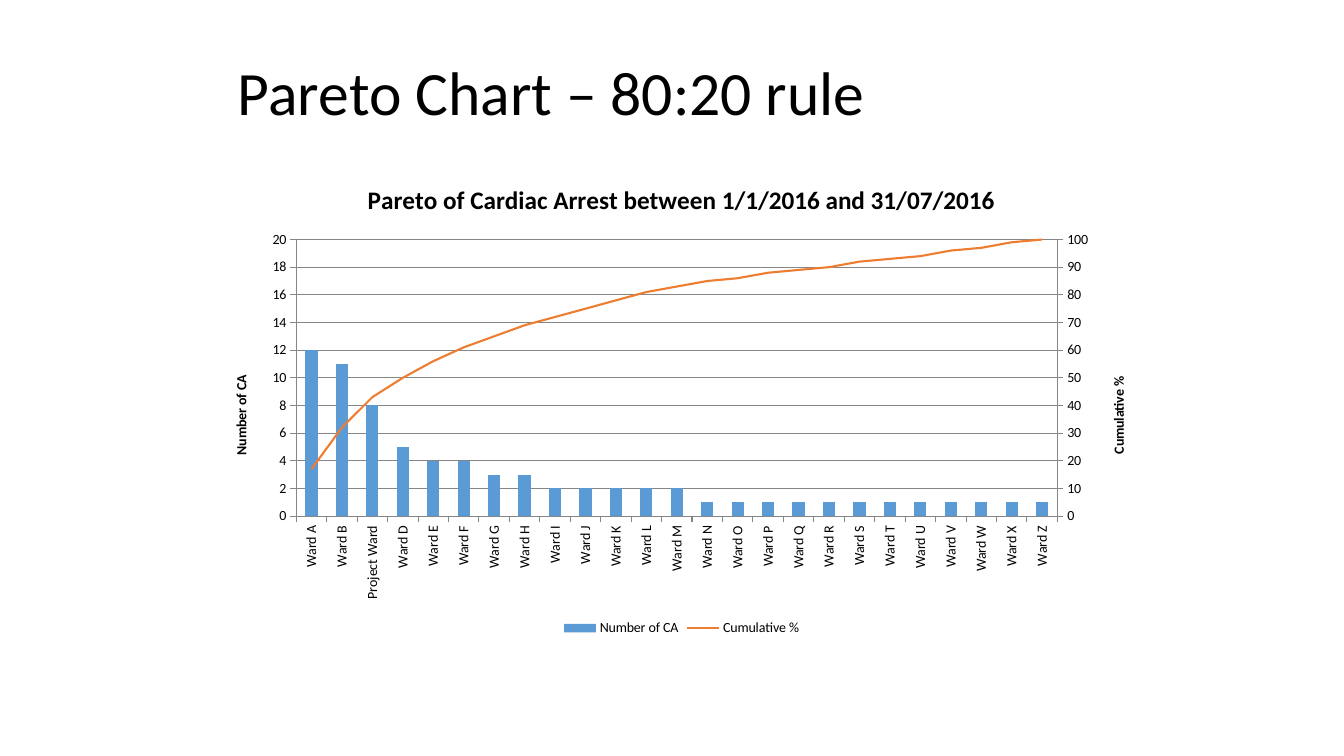
from copy import deepcopy
from itertools import accumulate

from pptx import Presentation
from pptx.chart import axis as ax, data
from pptx.dml import color
from pptx.enum import chart as ch, text
from pptx.oxml import ns, parse_xml
from pptx.util import Inches, Pt

HEADING = "Pareto Chart – 80:20 rule"
CHART_TITLE = "Pareto of Cardiac Arrest between 1/1/2016 and 31/07/2016"
COUNT_NAME = "Number of CA"
CUMULATIVE_NAME = "Cumulative %"
WARDS = ["Ward A", "Ward B", "Project Ward"] + [f"Ward {c}" for c in "DEFGHIJKLMNOPQRSTUVWXZ"]
COUNTS = [12, 11, 8, 5, 4, 4, 3, 3] + [2] * 5 + [1] * 12
CUMULATIVE = [round(100 * c / sum(COUNTS)) for c in accumulate(COUNTS)]

FONT = "Calibri"
BLACK, GREY, BLUE, ORANGE = "000000", "868686", "5B9BD5", "ED7D31"
HEADING_BOX = (2.26, 0.52, 9.06, 0.85)
CHART_BOX = (2.1, 1.62, 9.32, 4.73)
PLOT_SHARE = {"x": 0.09, "y": 0.16, "w": 0.81, "h": 0.58}
RIGHT_IDS = {"catAx": "50010", "valAx": "50020"}


def rgb(value):
    return color.RGBColor.from_string(value)


def style(font, size, bold=False):
    font.name, font.size, font.bold = FONT, Pt(size), bold
    font.color.rgb = rgb(BLACK)


def write(frame, words, size, bold=False):
    run = frame.paragraphs[0].add_run()
    run.text = words
    style(run.font, size, bold)


def turn(body):
    body.set("rot", "-5400000")
    body.set("vert", "horz")


def format_axis(axis, top=None, step=None, name=None):
    axis.major_tick_mark = ch.XL_TICK_MARK.OUTSIDE
    axis.minor_tick_mark = ch.XL_TICK_MARK.NONE
    axis.format.line.color.rgb = rgb(GREY)
    axis.format.line.width = Pt(0.75)
    style(axis.tick_labels.font, 10)
    if name:
        axis.minimum_scale, axis.maximum_scale, axis.major_unit = 0, top, step
        frame = axis.axis_title.text_frame
        write(frame, name, 10, True)
        turn(frame._txBody.bodyPr)


def set_plot_area(area):
    for old in area.xpath("c:layout"):
        area.remove(old)
    modes = "".join(f'<c:{k}Mode val="edge"/>' for k in "xy")
    sizes = "".join(f'<c:{k} val="{v}"/>' for k, v in PLOT_SHARE.items())
    area.insert(0, parse_xml(
        f'<c:layout {ns.nsdecls("c")}><c:manualLayout><c:layoutTarget val="inner"/>'
        f'{modes}{sizes}</c:manualLayout></c:layout>'))


def add_right_axis(area):
    bars = area.xpath("c:barChart")[0]
    cumulative = bars.xpath("c:ser")[1]
    for flag in cumulative.xpath("c:invertIfNegative"):
        cumulative.remove(flag)
    ids = "".join(f'<c:axId val="{i}"/>' for i in RIGHT_IDS.values())
    line = parse_xml(
        f'<c:lineChart {ns.nsdecls("c")}><c:grouping val="standard"/>'
        f'<c:varyColors val="0"/><c:marker val="1"/>{ids}</c:lineChart>')
    line.insert(2, cumulative)
    bars.addnext(line)

    category, value = (deepcopy(area.xpath(f"c:{kind}")[0]) for kind in RIGHT_IDS)
    for axis, own, other in ((category, "catAx", "valAx"), (value, "valAx", "catAx")):
        axis.xpath("c:axId")[0].set("val", RIGHT_IDS[own])
        axis.xpath("c:crossAx")[0].set("val", RIGHT_IDS[other])
    value.xpath("c:axPos")[0].set("val", "r")
    value.xpath("c:crosses")[0].set("val", "max")
    area.xpath("c:valAx")[0].addnext(value)
    value.addnext(category)
    ax.CategoryAxis(category).visible = False
    right = ax.ValueAxis(value)
    right.has_major_gridlines = False
    return right


def add_pareto(slide):
    pareto_data = data.CategoryChartData()
    pareto_data.categories = WARDS
    pareto_data.add_series(COUNT_NAME, COUNTS)
    pareto_data.add_series(CUMULATIVE_NAME, CUMULATIVE)
    pareto = slide.shapes.add_chart(
        ch.XL_CHART_TYPE.COLUMN_CLUSTERED, *map(Inches, CHART_BOX), pareto_data).chart
    style(pareto.font, 10)
    pareto.has_title = True
    write(pareto.chart_title.text_frame, CHART_TITLE, 18, True)
    pareto.chart_title.include_in_layout = False
    pareto.has_legend = True
    pareto.legend.position = ch.XL_LEGEND_POSITION.BOTTOM
    pareto.legend.include_in_layout = False
    style(pareto.legend.font, 10)

    area = pareto.element.xpath("c:chart/c:plotArea")[0]
    set_plot_area(area)
    bottom, left = pareto.category_axis, pareto.value_axis
    right = add_right_axis(area)
    format_axis(bottom)
    turn(area.xpath("c:catAx/c:txPr/a:bodyPr")[0])
    format_axis(left, 20, 2, COUNT_NAME)
    format_axis(right, 100, 10, CUMULATIVE_NAME)
    left.has_major_gridlines = True
    left.major_gridlines.format.line.color.rgb = rgb(GREY)
    left.major_gridlines.format.line.width = Pt(0.75)

    count_plot, cumulative_plot = pareto.plots
    count_plot.gap_width = 150
    count_plot.vary_by_categories = False
    count_fill = count_plot.series[0].format.fill
    count_fill.solid()
    count_fill.fore_color.rgb = rgb(BLUE)
    cumulative = cumulative_plot.series[0]
    cumulative.smooth = False
    cumulative.marker.style = ch.XL_MARKER_STYLE.NONE
    cumulative.format.line.color.rgb = rgb(ORANGE)
    cumulative.format.line.width = Pt(1.5)


def main():
    deck = Presentation()
    deck.slide_width, deck.slide_height = Inches(13.33), Inches(7.5)
    slide = deck.slides.add_slide(deck.slide_layouts[5])
    heading = slide.shapes.title
    heading.left, heading.top, heading.width, heading.height = map(Inches, HEADING_BOX)
    frame = heading.text_frame
    frame.auto_size = text.MSO_AUTO_SIZE.NONE
    frame.vertical_anchor = text.MSO_ANCHOR.MIDDLE
    frame.paragraphs[0].alignment = text.PP_ALIGN.LEFT
    frame.paragraphs[0].line_spacing = 0.9
    write(frame, HEADING, 44)
    add_pareto(slide)
    deck.save("out.pptx")


if __name__ == "__main__":
    main()
